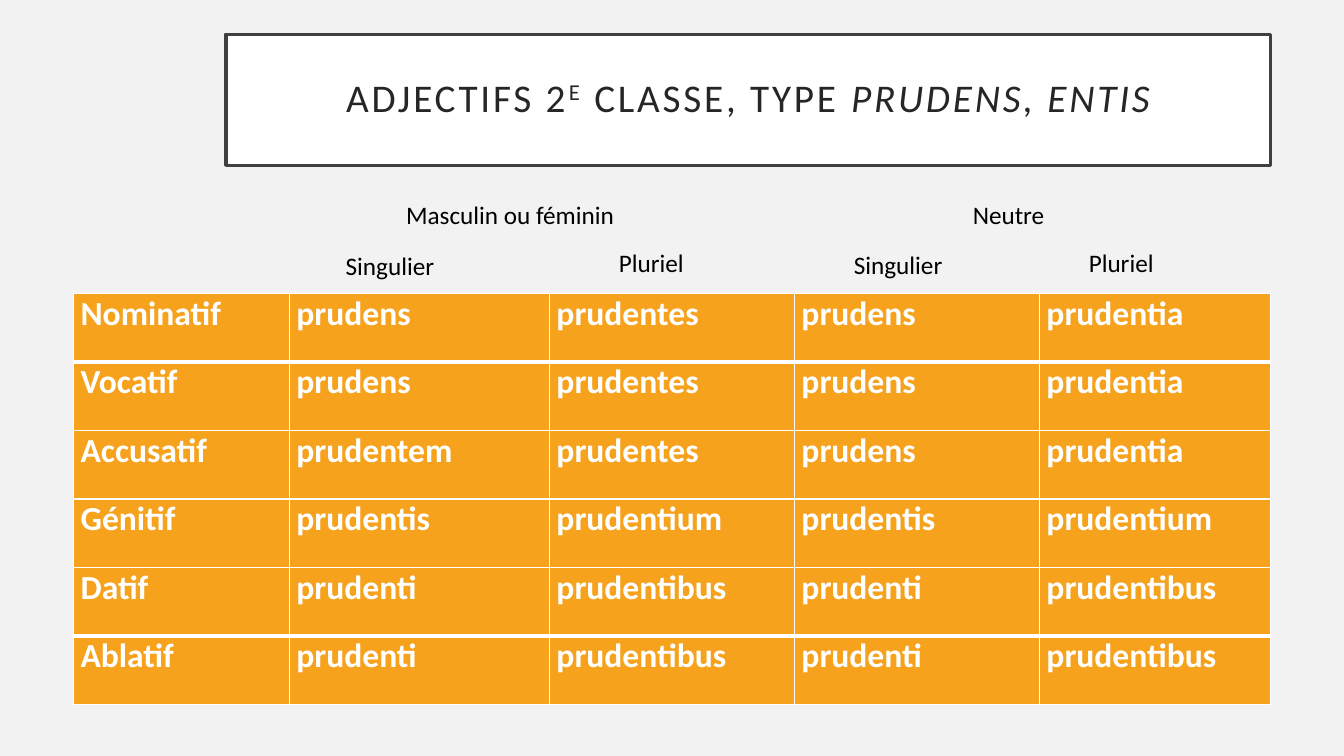
import pptx
import pptx.dml.color
import pptx.enum.shapes
import pptx.enum.text
import pptx.oxml.ns
import pptx.util
from lxml import etree
from pptx.util import Inches

FONT = "Calibri"
COLORS = {
    "background": "F2F2F2",
    "white": "FFFFFF",
    "frame": "404040",
    "title": "262626",
    "cell": "F6A21D",
    "label": "000000",
}

# Title runs: text, superscript, italic
TITLE = [
    ("ADJECTIFS 2", False, False),
    ("E", True, False),
    (" CLASSE, TYPE ", False, False),
    ("PRUDENS, ENTIS", False, True),
]

# Column headings: text, left, top, width
LABELS = [
    ("Masculin ou féminin", 3.93, 1.93, 2.87),
    ("Neutre", 9.55, 1.93, 1.51),
    ("Singulier", 3.33, 2.43, 1.51),
    ("Pluriel", 6.04, 2.4, 1.51),
    ("Singulier", 8.37, 2.42, 1.51),
    ("Pluriel", 10.7, 2.4, 1.51),
]

COLUMN_WIDTHS = [2.14, 2.58, 2.43, 2.43, 2.29]
ROW_HEIGHT = 0.68
DECLENSION = [
    ("Nominatif", "prudens", "prudentes", "prudens", "prudentia"),
    ("Vocatif", "prudens", "prudentes", "prudens", "prudentia"),
    ("Accusatif", "prudentem", "prudentes", "prudens", "prudentia"),
    ("Génitif", "prudentis", "prudentium", "prudentis", "prudentium"),
    ("Datif", "prudenti", "prudentibus", "prudenti", "prudentibus"),
    ("Ablatif", "prudenti", "prudentibus", "prudenti", "prudentibus"),
]


def rgb(name):
    return pptx.dml.color.RGBColor.from_string(COLORS[name])


def fill_solid(fill, color):
    fill.solid()
    fill.fore_color.rgb = rgb(color)


def format_run(r, size, color, bold=False, italic=False):
    r.font.name = FONT
    r.font.size = pptx.util.Pt(size)
    r.font.color.rgb = rgb(color)
    r.font.bold = bold
    r.font.italic = italic


def add_title(s):
    sp = s.shapes.add_shape(
        pptx.enum.shapes.MSO_SHAPE.RECTANGLE,
        Inches(2.24), Inches(0.34), Inches(10.36), Inches(1.3))
    sp.shadow.inherit = False
    fill_solid(sp.fill, "white")
    sp.line.color.rgb = rgb("frame")
    sp.line.width = pptx.util.Pt(2.5)
    tf = sp.text_frame
    tf.word_wrap = True
    tf.vertical_anchor = pptx.enum.text.MSO_ANCHOR.MIDDLE
    tf.margin_left = tf.margin_right = Inches(0.2)
    tf.margin_top = tf.margin_bottom = Inches(0.2)
    p = tf.paragraphs[0]
    p.alignment = pptx.enum.text.PP_ALIGN.CENTER
    p.line_spacing = 0.9
    for text, superscript, italic in TITLE:
        r = p.add_run()
        r.text = text
        format_run(r, 28, "title", italic=italic)
        properties = r.font._element
        properties.set("spc", "200")
        if superscript:
            properties.set("baseline", "30000")


def add_label(s, text, left, top, width):
    sp = s.shapes.add_textbox(Inches(left), Inches(top), Inches(width), Inches(0.4))
    tf = sp.text_frame
    tf.word_wrap = True
    tf.auto_size = pptx.enum.text.MSO_AUTO_SIZE.SHAPE_TO_FIT_TEXT
    tf.text = text
    format_run(tf.paragraphs[0].runs[0], 18, "label")


def set_borders(cell, top, bottom):
    properties = cell._tc.get_or_add_tcPr()
    widths = [("a:lnL", 1), ("a:lnR", 1), ("a:lnT", top), ("a:lnB", bottom)]
    for position, (tag, width) in enumerate(widths):
        line = etree.Element(pptx.oxml.ns.qn(tag), w=str(pptx.util.Pt(width)))
        solid = etree.SubElement(line, pptx.oxml.ns.qn("a:solidFill"))
        etree.SubElement(solid, pptx.oxml.ns.qn("a:srgbClr"), val=COLORS["white"])
        # Borders must come before the fill
        properties.insert(position, line)


def add_declension_table(s):
    rows, columns = len(DECLENSION), len(COLUMN_WIDTHS)
    table = s.shapes.add_table(
        rows, columns, Inches(0.73), Inches(2.91),
        Inches(sum(COLUMN_WIDTHS)), Inches(ROW_HEIGHT * rows)).table
    table.first_row = table.horz_banding = False
    for column, width in zip(table.columns, COLUMN_WIDTHS):
        column.width = Inches(width)
    for i, forms in enumerate(DECLENSION):
        table.rows[i].height = Inches(ROW_HEIGHT)
        # Thick rules set off the first and last rows
        top = 3 if i in (1, rows - 1) else 1
        bottom = 3 if i in (0, rows - 2) else 1
        for j, form in enumerate(forms):
            cell = table.cell(i, j)
            cell.margin_left = cell.margin_right = Inches(0.07)
            cell.margin_top = cell.margin_bottom = 0
            fill_solid(cell.fill, "cell")
            cell.text = form
            format_run(cell.text_frame.paragraphs[0].runs[0], 24, "white", bold=True)
            set_borders(cell, top, bottom)


def main():
    prs = pptx.Presentation()
    prs.slide_width, prs.slide_height = Inches(13.33), Inches(7.5)
    s = prs.slides.add_slide(prs.slide_layouts[6])
    fill_solid(s.background.fill, "background")

    add_title(s)
    add_declension_table(s)
    for label in LABELS:
        add_label(s, *label)

    prs.save("out.pptx")


if __name__ == "__main__":
    main()
